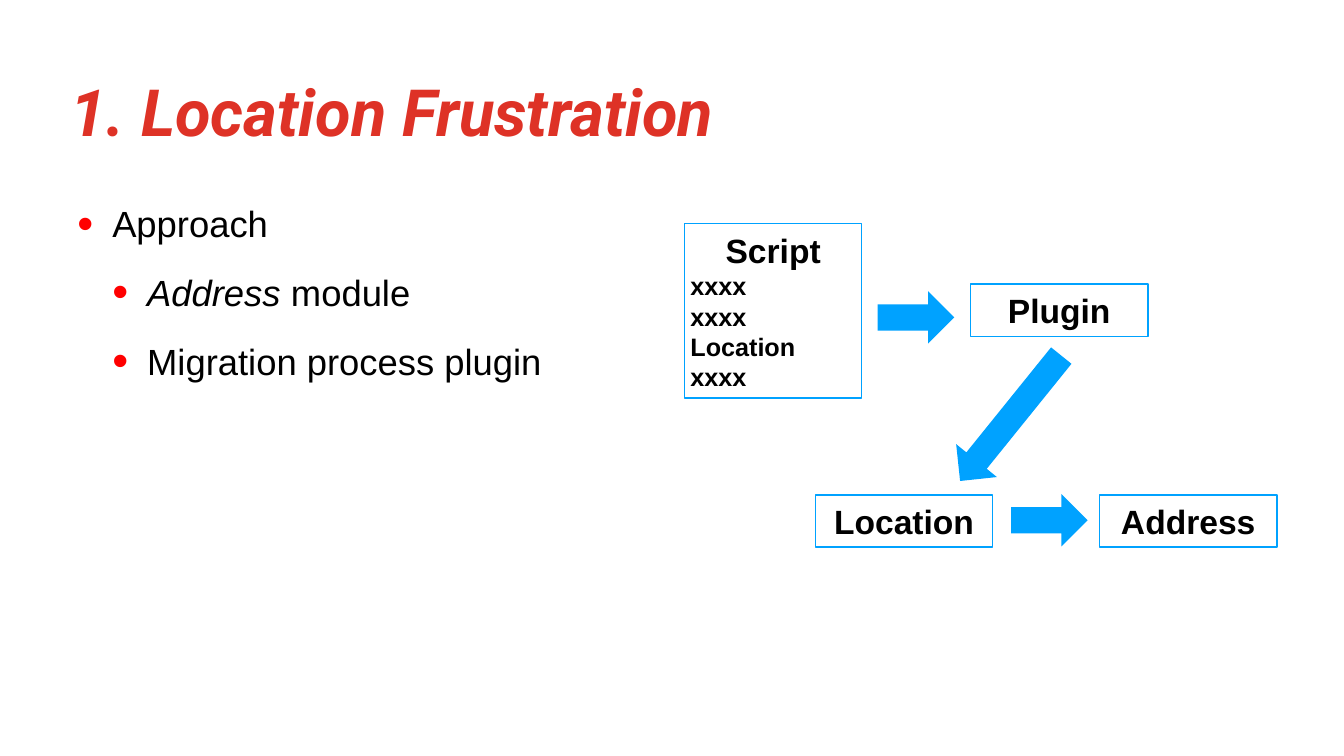
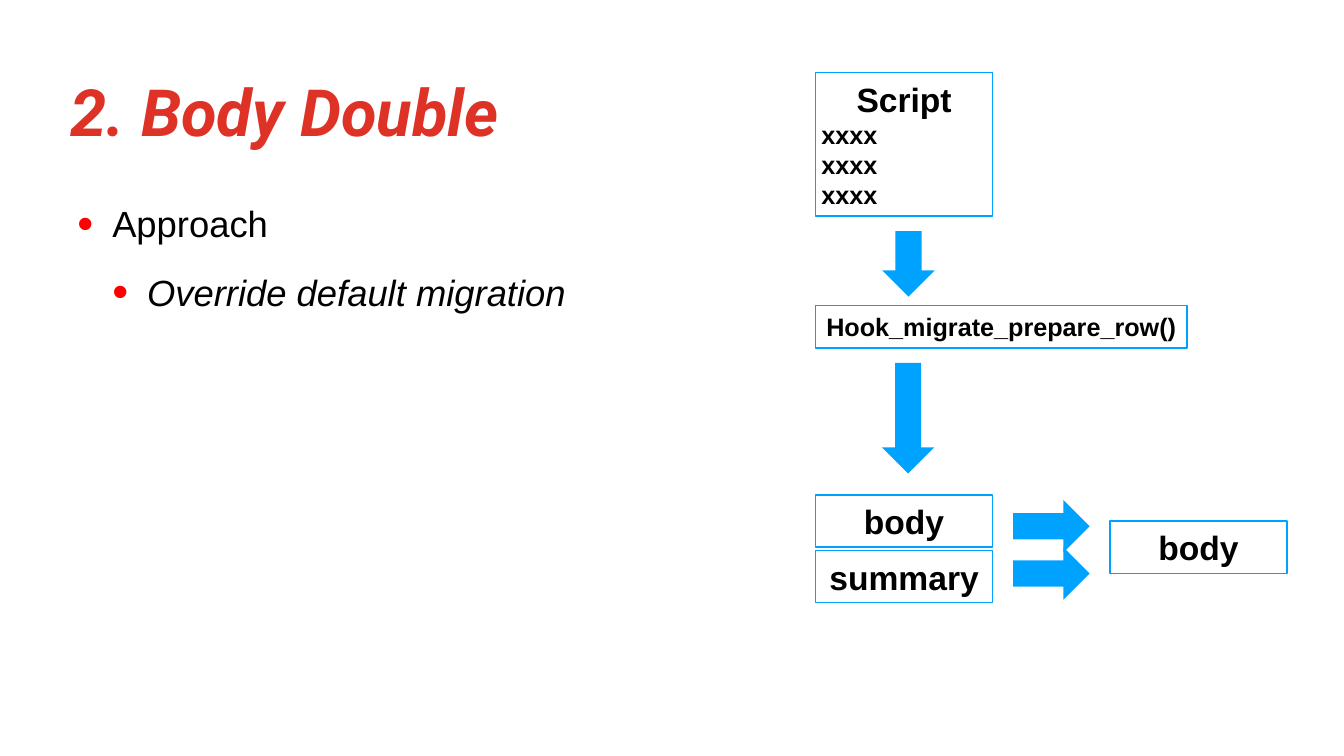
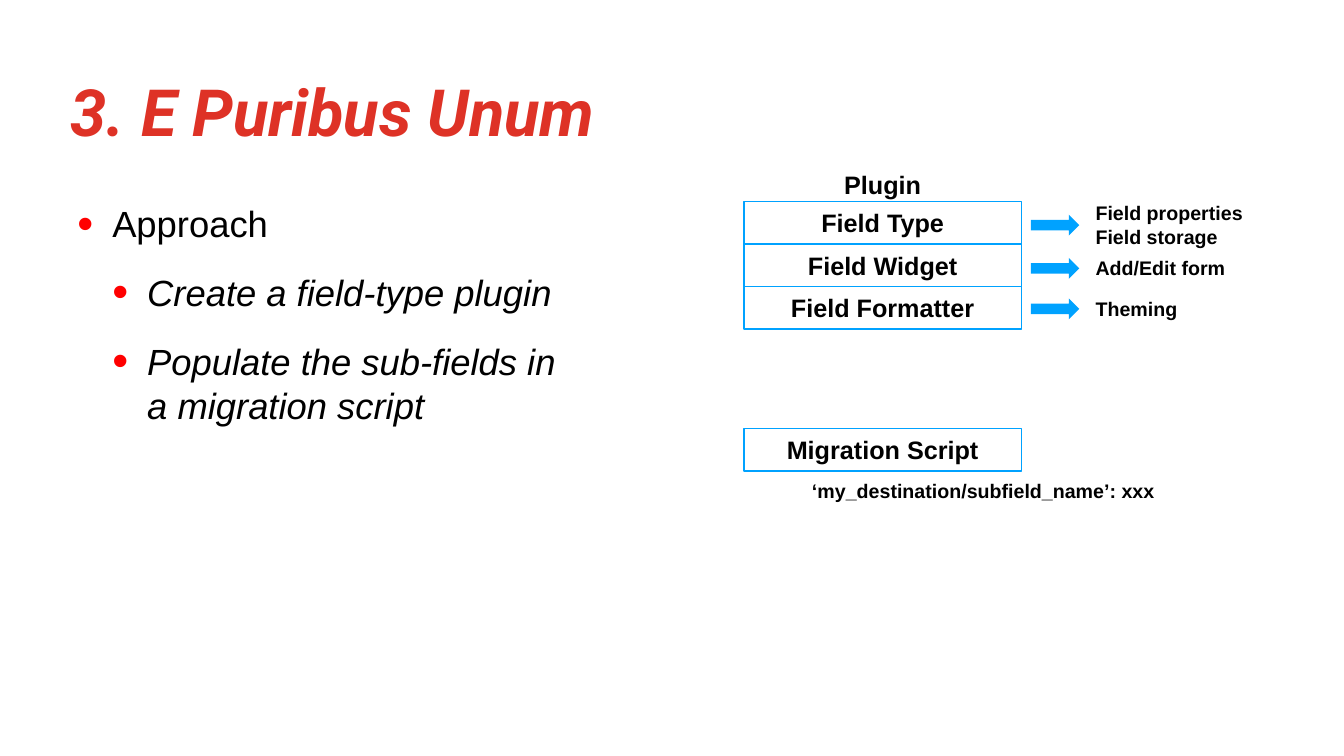
import pptx
import pptx.util
import pptx.oxml.ns
import pptx.dml.color
import pptx.enum.shapes
import pptx.enum.text
import lxml.etree

Cm, Pt = pptx.util.Cm, pptx.util.Pt
ALIGN = pptx.enum.text.PP_ALIGN
ANCHOR = pptx.enum.text.MSO_ANCHOR
SHAPE = pptx.enum.shapes.MSO_SHAPE

RED, BLUE, BLACK, DOT = "DE3226", "00A2FF", "000000", "FF0000"


def color(code):
    return pptx.dml.color.RGBColor.from_string(code)


class Deck:
    """Hold the style of the deck and the slide being filled."""

    pad = 0.15
    box_w, box_h = 4.47, 1.32
    row_w, row_h = 6.99, 1.07
    step = 0.88

    def __init__(self):
        self.file = pptx.Presentation()
        self.file.slide_width, self.file.slide_height = Cm(33.87), Cm(19.05)
        self.slide = None

    def page(self, title):
        self.slide = self.file.slides.add_slide(self.file.slide_layouts[6])
        frame = self.text(1.63, 2.03, 31.22, 1.9)
        para = self.line(frame, ALIGN.LEFT)
        para.line_spacing = 0.8
        self.run(para, title, 46.5, RED, font="Roboto", italic=True)

    def frame(self, shape, anchor=ANCHOR.MIDDLE):
        frame = shape.text_frame
        frame.word_wrap = True
        frame.vertical_anchor = anchor
        frame.margin_left = frame.margin_right = Cm(self.pad)
        frame.margin_top = frame.margin_bottom = Cm(self.pad)
        return frame

    def text(self, x, y, w, h, anchor=ANCHOR.MIDDLE):
        shape = self.slide.shapes.add_textbox(Cm(x), Cm(y), Cm(w), Cm(h))
        return self.frame(shape, anchor)

    def line(self, frame, align):
        para = frame.paragraphs[0]
        if para.runs:
            para = frame.add_paragraph()
        para.alignment = align
        return para

    def run(self, para, text, size, ink=BLACK, font="Arial", bold=True, italic=False):
        for i, part in enumerate(text.split("\n")):
            if i:
                para.add_line_break()
            run = para.add_run()
            run.text = part
            run.font.name, run.font.size = font, Pt(size)
            run.font.bold, run.font.italic = bold, italic
            run.font.color.rgb = color(ink)

    def bullet(self, para, level):
        props = para._p.get_or_add_pPr()
        props.set("marL", str(Cm(self.step * (level + 1))))
        props.set("indent", str(-Cm(self.step)))
        qn = pptx.oxml.ns.qn
        tint = lxml.etree.SubElement(props, qn("a:buClr"))
        lxml.etree.SubElement(tint, qn("a:srgbClr"), val=DOT)
        lxml.etree.SubElement(props, qn("a:buSzPct"), val="125000")
        lxml.etree.SubElement(props, qn("a:buFont"), typeface="Arial")
        lxml.etree.SubElement(props, qn("a:buChar"), char="•")

    def points(self, h, *items):
        frame = self.text(1.8, 4.93, 29.9, h, ANCHOR.TOP)
        for i, runs in enumerate([[("Approach", False)], *items]):
            para = self.line(frame, ALIGN.LEFT)
            para.level = min(i, 1)
            self.bullet(para, para.level)
            if i:
                para.space_before = Pt(18)
            for text, italic in runs:
                self.run(para, text, 26, bold=False, italic=italic)

    def shape(self, kind, x, y, w, h):
        shape = self.slide.shapes.add_shape(kind, Cm(x), Cm(y), Cm(w), Cm(h))
        shape.shadow.inherit = False
        return shape

    def box(self, head, x, y, w=box_w, h=box_h, size=24, code=()):
        shape = self.shape(SHAPE.RECTANGLE, x, y, w, h)
        shape.fill.background()
        shape.line.color.rgb = color(BLUE)
        shape.line.width = Pt(1)
        frame = self.frame(shape)
        self.run(self.line(frame, ALIGN.CENTER), head, size)
        for text in code:
            self.run(self.line(frame, ALIGN.LEFT), text, 18)

    def row(self, head, x, y, w=row_w):
        self.box(head, x, y, w, self.row_h, 18)

    def label(self, lines, x, y, w, h, size=14, align=ALIGN.LEFT):
        frame = self.text(x, y, w, h)
        for text in lines:
            self.run(self.line(frame, align), text, size)

    def arrow(self, x, y, w=1.93, h=box_h, turn=0):
        shape = self.shape(SHAPE.RIGHT_ARROW, x, y, w, h)
        shape.fill.solid()
        shape.fill.fore_color.rgb = color(BLUE)
        shape.line.fill.background()
        shape.rotation = turn


def place(deck):
    deck.page("1. Location Frustration")
    deck.points(6.65, [("Address", True), (" module", False)],
                [("Migration process plugin", False)])
    deck.box("Script", 17.25, 5.64, h=4.39, code=["xxxx", "xxxx", "Location", "xxxx"])
    deck.box("Plugin", 24.46, 7.16)
    deck.box("Location", 20.55, 12.47)
    deck.box("Address", 27.71, 12.47)
    deck.arrow(22.12, 7.34)
    deck.arrow(23.44, 9.88, 4.06, turn=128.9)
    deck.arrow(25.48, 12.45)


def body(deck):
    left = 20.55
    deck.page("2. Body Double")
    deck.points(4.9, [("Override default migration", True)])
    deck.box("Script", left, 1.83, h=3.61, code=["xxxx"] * 3)
    deck.row("Hook_migrate_prepare_row()", left, 7.7, 9.37)
    deck.box("body", left, 12.47)
    deck.box("summary", left, 13.87)
    deck.box("body", 27.97, 13.13)
    deck.arrow(22.07, 5.99, 1.65, turn=90)
    deck.arrow(21.49, 9.88, 2.79, turn=90)
    for y in (12.6, 13.79):
        deck.arrow(25.53, y)


def field(deck):
    left, top = 18.75, 5.08
    deck.page("3. E Puribus Unum")
    deck.points(7.77, [("Create a field-type plugin", True)],
                [("Populate the sub-fields in\na migration script", True)])
    deck.label(["Plugin"], left, 4.11, deck.row_w, deck.row_h, 18, ALIGN.CENTER)
    rows = [
        ("Field Type", ["Field properties", "Field storage"], 4.93, 1.47, 5.41),
        ("Field Widget", ["Add/Edit form"], 6.3, 0.89, 6.5),
        ("Field Formatter", ["Theming"], 7.34, 0.89, 7.52),
    ]
    for i, (name, notes, y, h, tip) in enumerate(rows):
        deck.row(name, left, top + i * deck.row_h)
        deck.label(notes, 27.46, y, 5.13, h)
        deck.arrow(25.98, tip, 1.22, 0.53)
    deck.row("Migration Script", left, 10.8)
    deck.label(["‘my_destination/subfield_name’: xxx"], left, 11.91, 12.07, 0.89,
               align=ALIGN.CENTER)


def main():
    deck = Deck()
    for build in (place, body, field):
        build(deck)
    deck.file.save("out.pptx")


if __name__ == "__main__":
    main()
